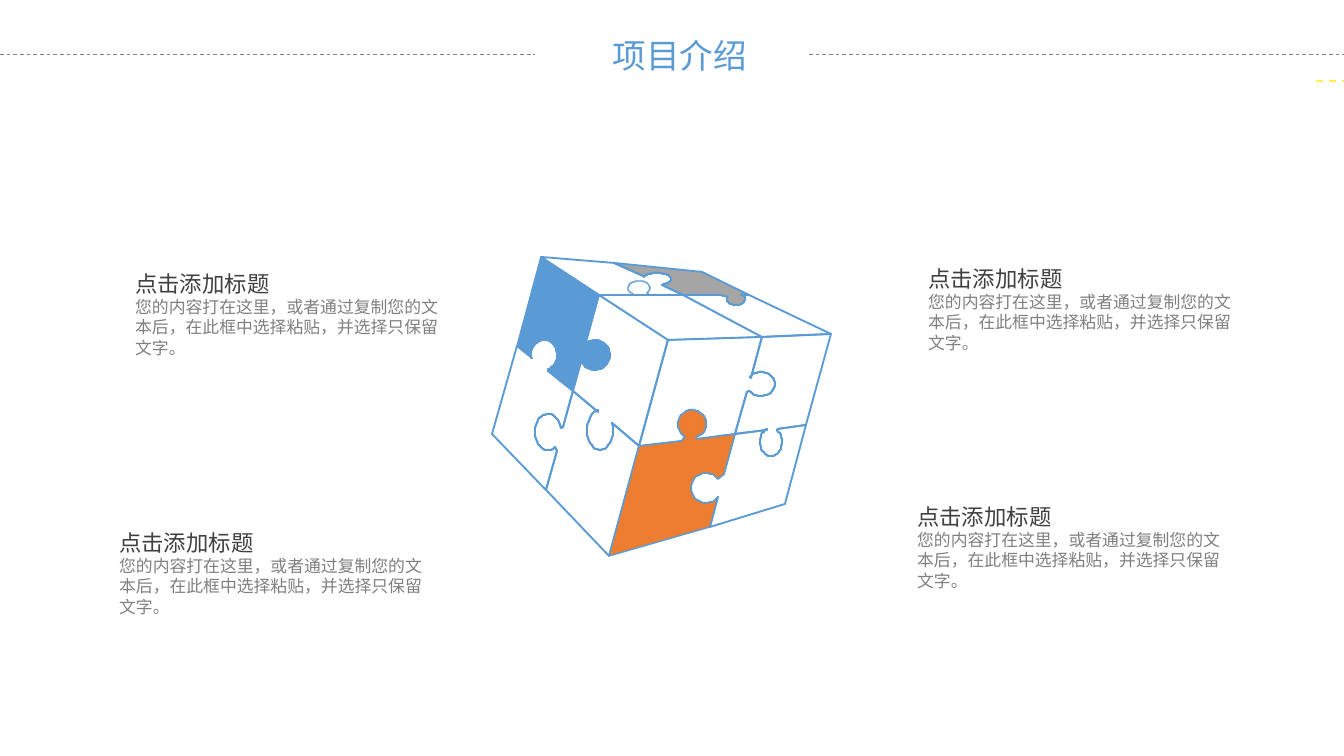
import math
from lxml import etree
from pptx import Presentation, util as u
from pptx.dml.color import RGBColor
from pptx.enum import dml, shapes, text
from pptx.oxml.ns import qn

PX = 914400 / 134.4
FONT = "Noto Sans CJK SC"
BLUE = RGBColor(0x5B, 0x9B, 0xD5)
ORANGE = RGBColor(0xED, 0x7D, 0x31)
SILVER = RGBColor(0xA5, 0xA5, 0xA5)
DARK = RGBColor(0x40, 0x40, 0x40)
GRAY = RGBColor(0x80, 0x80, 0x80)
YELLOW = RGBColor(0xFF, 0xF0, 0x50)

TITLE = "项目介绍"
HEADING = "点击添加标题"
BODY = "您的内容打在这里，或者通过复制您的文本后，在此框中选择粘贴，并选择只保留文字。"
BLOCK_W = 343
BLOCKS = [(122, 262, 122), (106, 521, 146), (915, 257, 146), (904, 495, 146)]
RULES = [(0, 535, 55, GRAY, 0.5), (809, 1344, 55, GRAY, 0.5),
         (1316, 1344, 81, YELLOW, 1)]

CORNERS = {
    "A": (541, 257), "B": (614, 263), "C": (702, 272), "D": (749, 295),
    "E": (831, 334), "F": (683, 295), "G": (599, 295), "H": (762, 337),
    "I": (668, 340), "J": (517, 346), "K": (573, 391), "L": (639, 446),
    "M": (492, 434), "N": (546, 490), "O": (609, 556), "P": (735, 434),
    "Q": (806, 425), "R": (710, 527), "S": (785, 504),
}
# Edge: neck start and end as shares of the edge, head centre, head radii.
KNOBS = {
    "FB": (0.28, 0.58, 657, 279, 14, 6),
    "FD": (0.56, 0.88, 736, 299, 9, 6),
    "FG": (0.39, 0.6, 639, 288, 11, 7),
    "GK": (0.49, 0.66, 595, 355, 15, 15),
    "KJ": (0.44, 0.74, 544, 355, 13, 15),
    "KN": (0.36, 0.61, 548, 432, 13, 18),
    "KL": (0.38, 0.59, 600, 430, 13, 20),
    "HP": (0.42, 0.57, 761, 384, 14, 12),
    "PL": (0.4, 0.55, 692, 424, 14, 14),
    "PR": (0.43, 0.68, 706, 488, 15, 15),
    "PQ": (0.45, 0.6, 771, 442, 11, 14),
}
PIECES = [("FDEH", None, 1), ("FHIG", None, 0.75), ("AGKJ", BLUE, 0.75),
          ("KLON", None, 1), ("IHPL", None, 1), ("PQSR", None, 1),
          ("HEQP", None, 1), ("JKNM", None, 1), ("BCDF", SILVER, 1),
          ("ABFG", None, 1), ("GILK", None, 1), ("LPRO", ORANGE, 0.75)]
STRAIGHT = {("ABFG", "FG")}


def px(n):
    return u.Emu(round(n * PX))


def knob(a, b):
    start, end, cx, cy, rx, ry = KNOBS[a + b]
    (ax, ay), (bx, by) = CORNERS[a], CORNERS[b]
    necks = [(ax + t * (bx - ax), ay + t * (by - ay)) for t in (start, end)]
    a1, a2 = [math.atan2((y - cy) / ry, (x - cx) / rx) for x, y in necks]
    sweep = (a2 - a1) % math.tau
    if sweep < math.pi:
        sweep -= math.tau
    n = 32
    angles = [a1 + sweep * i / n for i in range(n + 1)]
    head = [(cx + rx * math.cos(t), cy + ry * math.sin(t)) for t in angles]
    return [necks[0], *head, necks[1]]


def edge(a, b):
    if a + b in KNOBS:
        return [CORNERS[a]] + knob(a, b)
    if b + a in KNOBS:
        return [CORNERS[a]] + knob(b, a)[::-1]
    return [CORNERS[a]]


def add_piece(s, corners, color, width):
    pts = []
    for a, b in zip(corners, corners[1:] + corners[0]):
        pts += [CORNERS[a]] if (corners, a + b) in STRAIGHT else edge(a, b)
    fb = s.shapes.build_freeform(*pts[0], scale=PX)
    fb.add_line_segments(pts[1:], close=True)
    sp = fb.convert_to_shape()
    sp.shadow.inherit = False
    if color is None:
        sp.fill.background()
    else:
        sp.fill.solid()
        sp.fill.fore_color.rgb = color
    sp.line.color.rgb = BLUE
    sp.line.width = u.Pt(width)


def add_rule(s, x1, x2, y, color, width):
    c = s.shapes.add_connector(shapes.MSO_CONNECTOR.STRAIGHT,
                               px(x1), px(y), px(x2), px(y))
    c.line.color.rgb = color
    c.line.width = u.Pt(width)
    c.line.dash_style = dml.MSO_LINE.DASH
    etree.SubElement(c._element.spPr, qn("a:effectLst"))


def set_text(p, words, size, color, spacing=None):
    p.text = words
    p.font.name = FONT
    p.font.size = u.Pt(size)
    p.font.color.rgb = color
    latin = p.font._element.find(qn("a:latin"))
    latin.addnext(etree.Element(qn("a:ea"), typeface=FONT))
    if spacing:
        p.line_spacing = u.Pt(spacing)


def add_block(s, x, y, h):
    tf = s.shapes.add_textbox(px(x), px(y), px(BLOCK_W), px(h)).text_frame
    tf.word_wrap = True
    set_text(tf.paragraphs[0], HEADING, 12, DARK, 15)
    set_text(tf.add_paragraph(), BODY, 9, GRAY, 10.9)


def main():
    prs = Presentation()
    prs.slide_width, prs.slide_height = px(1344), px(756)
    s = prs.slides.add_slide(prs.slide_layouts[5])
    sp = s.shapes.title
    sp.left, sp.top, sp.width, sp.height = px(602), px(30), px(156), px(51)
    tf = sp.text_frame
    tf.word_wrap = False
    tf.margin_left = tf.margin_right = px(10)
    tf.margin_top = tf.margin_bottom = px(5)
    tf.vertical_anchor = text.MSO_ANCHOR.MIDDLE
    set_text(tf.paragraphs[0], TITLE, 18, BLUE)
    for rule in RULES:
        add_rule(s, *rule)
    for piece in PIECES:
        add_piece(s, *piece)
    for block in BLOCKS:
        add_block(s, *block)
    prs.save("out.pptx")


if __name__ == "__main__":
    main()
